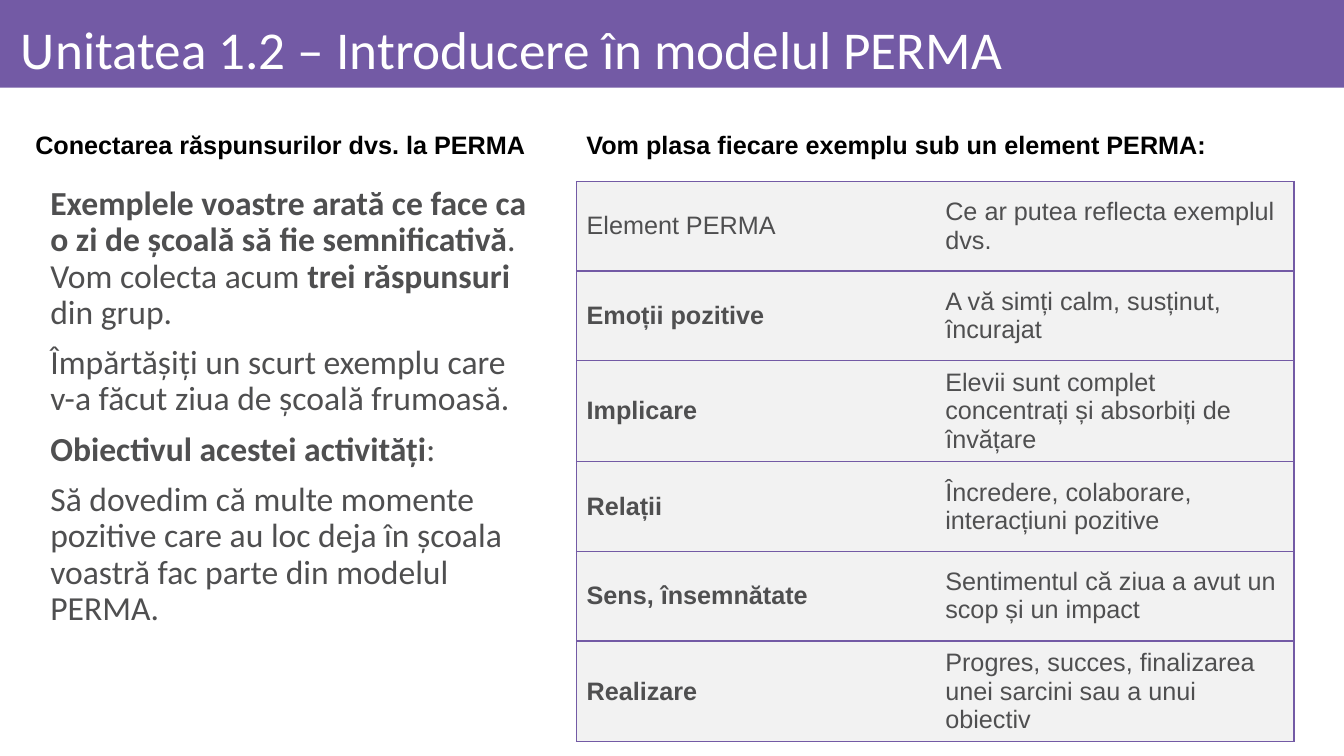
"""Build the slide that introduces the PERMA model."""
from dataclasses import dataclass

from lxml import etree
from pptx import Presentation
from pptx.dml.color import RGBColor
from pptx.enum.shapes import MSO_SHAPE
from pptx.enum.text import MSO_ANCHOR
from pptx.oxml.ns import qn
from pptx.util import Cm, Pt

RECT = MSO_SHAPE.RECTANGLE
TOP = MSO_ANCHOR.TOP
MIDDLE = MSO_ANCHOR.MIDDLE
PURPLE = RGBColor(0x73, 0x5A, 0xA5)
GREY = RGBColor(0x4F, 0x4F, 0x50)
PALE = RGBColor(0xF2, 0xF2, 0xF2)
WHITE = RGBColor(0xFF, 0xFF, 0xFF)
BLACK = RGBColor(0x00, 0x00, 0x00)


@dataclass(frozen=True)
class Run:
    text: str
    bold: bool = False


@dataclass(frozen=True)
class Style:
    font: str
    size: int
    color: RGBColor
    indent: float = 0
    format: tuple = ()


@dataclass(frozen=True)
class Box:
    left: float
    top: float
    width: float
    height: float
    style: Style
    paras: list[list[Run]]
    anchor: MSO_ANCHOR = TOP
    pads: tuple = (0.25, 0.13, 0.25, 0.13)


TITLE = Style("Calibri", 38, WHITE)
HEAD = Style("Arial", 18, BLACK)
CELL = Style("Arial", 18, GREY)
BODY = Style("Calibri", 24, GREY, 0.74,
             (("line_spacing", 0.9), ("space_before", Pt(10))))

BOXES = [
    Box(0.28, 0.23, 33.17, 1.98, TITLE,
        [[Run("Unitatea 1.2 – Introducere în modelul PERMA")]],
        MIDDLE, (0.25, 0.15, 0.15, 0.15)),
    Box(0.28, 4.57, 13.28, 16.31, BODY, [
        [Run("Exemplele voastre arată ce face ca o zi de școală "
             "să fie semnificativă", True),
         Run(". Vom colecta acum "), Run("trei răspunsuri ", True),
         Run("din grup.")],
        [Run("Împărtășiți un scurt exemplu care v-a făcut ziua "
             "de școală frumoasă.")],
        [Run("Obiectivul acestei activități", True), Run(":")],
        [Run("Să dovedim că multe momente pozitive care au loc deja în "
             "școala voastră fac parte din modelul PERMA.")],
    ]),
    Box(14.53, 3.12, 17.07, 1.02, HEAD,
        [[Run("Vom plasa fiecare exemplu sub un element PERMA:", True)]]),
    Box(0.64, 3.12, 12.93, 1.02, HEAD,
        [[Run("Conectarea răspunsurilor dvs. la PERMA", True)]]),
]

ROWS = [
    ("Element PERMA", "Ce ar putea reflecta exemplul dvs."),
    ("Emoții pozitive", "A vă simți calm, susținut, încurajat"),
    ("Implicare", "Elevii sunt complet concentrați și absorbiți de învățare"),
    ("Relații", "Încredere, colaborare, interacțiuni pozitive"),
    ("Sens, însemnătate", "Sentimentul că ziua a avut un scop și un impact"),
    ("Realizare",
     "Progres, succes, finalizarea unei sarcini sau a unui obiectiv"),
]


def apply(item, values: dict) -> None:
    """Set each named attribute on the item."""
    for name, value in values.items():
        setattr(item, name, value)


def write(frame, paras: list[list[Run]], style: Style) -> None:
    """Fill a text frame with styled paragraphs."""
    for i, runs in enumerate(paras):
        para = frame.add_paragraph() if i else frame.paragraphs[0]
        apply(para, dict(style.format))
        if style.indent:
            props = para._p.get_or_add_pPr()
            props.set("marL", str(int(Cm(style.indent))))
            props.set("indent", "0")
        for part in runs:
            run = para.add_run()
            run.text = part.text
            apply(run.font, {"name": style.font, "size": Pt(style.size),
                             "bold": part.bold})
            run.font.color.rgb = style.color


def add_box(slide, box: Box) -> None:
    """Place one text box."""
    spots = (box.left, box.top, box.width, box.height)
    frame = slide.shapes.add_textbox(*map(Cm, spots)).text_frame
    sides = ("left", "top", "right", "bottom")
    apply(frame, {f"margin_{side}": Cm(pad)
                  for side, pad in zip(sides, box.pads)})
    apply(frame, {"word_wrap": True, "vertical_anchor": box.anchor})
    write(frame, box.paras, box.style)


def add_edges(cell, shown: str) -> None:
    """Draw the shown cell edges and hide the rest."""
    props = cell._tc.get_or_add_tcPr()
    for i, side in enumerate("LRTB"):
        edge = etree.Element(qn(f"a:ln{side}"), w=str(int(Pt(1))))
        if side in shown:
            fill = etree.SubElement(edge, qn("a:solidFill"))
            etree.SubElement(fill, qn("a:srgbClr"), val=str(PURPLE))
        else:
            etree.SubElement(edge, qn("a:noFill"))
        props.insert(i, edge)


def add_grid(slide) -> None:
    """Place the table of PERMA elements."""
    spots = map(Cm, (14.53, 4.57, 18.08, 13.56))
    table = slide.shapes.add_table(len(ROWS), 2, *spots).table
    apply(table, {"first_row": False, "horz_banding": False})
    for r, texts in enumerate(ROWS):
        for c, text in enumerate(texts):
            cell = table.cell(r, c)
            cell.vertical_anchor = MIDDLE
            cell.fill.solid()
            cell.fill.fore_color.rgb = PALE
            add_edges(cell, "RTB" if c else "LTB")
            bold = r > 0 and c == 0
            write(cell.text_frame, [[Run(text, bold)]], CELL)


def main() -> None:
    """Build and save the slide."""
    deck = Presentation()
    apply(deck, {"slide_width": Cm(33.87), "slide_height": Cm(19.05)})
    slide = deck.slides.add_slide(deck.slide_layouts[6])
    band = slide.shapes.add_shape(RECT, 0, 0, deck.slide_width, Cm(2.21))
    band.shadow.inherit = False
    band.fill.solid()
    band.fill.fore_color.rgb = PURPLE
    band.line.fill.background()
    for box in BOXES:
        add_box(slide, box)
    add_grid(slide)
    deck.save("out.pptx")


if __name__ == "__main__":
    main()
